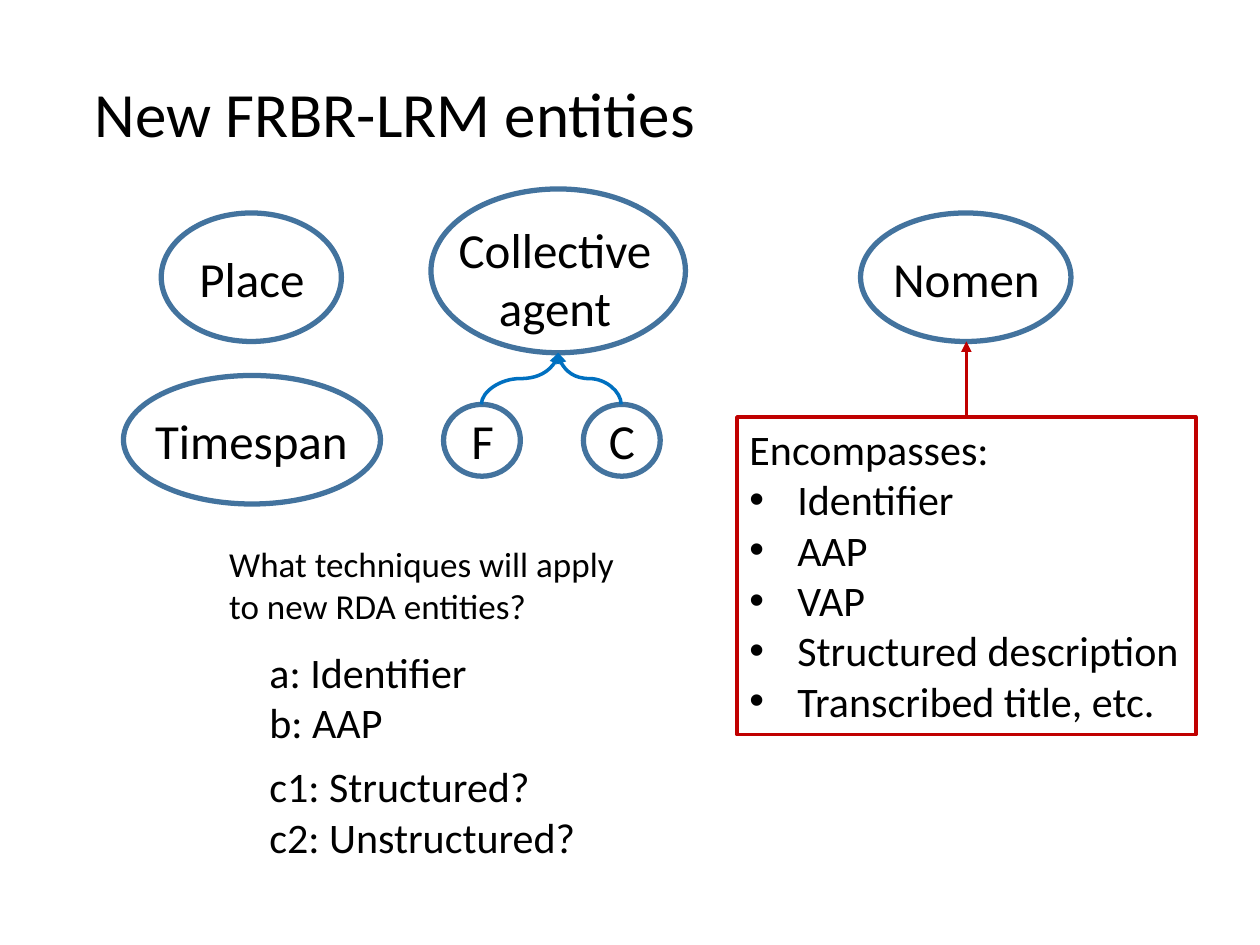
from dataclasses import dataclass

from pptx import Presentation
from pptx.dml.color import RGBColor as Rgb
from pptx.enum.shapes import MSO_CONNECTOR as Link, MSO_SHAPE as Form
from pptx.enum.text import MSO_ANCHOR as Anchor, MSO_AUTO_SIZE as Fit, PP_ALIGN as Align
from pptx.oxml import parse_xml
from pptx.oxml.ns import nsdecls
from pptx.util import Inches, Pt


@dataclass(frozen=True)
class Theme:
    """Colours, font and type sizes of the slide."""
    ink: Rgb = Rgb(0, 0, 0)
    ring: Rgb = Rgb(0x43, 0x73, 0x9E)
    blue: Rgb = Rgb(0x00, 0x70, 0xC0)
    red: Rgb = Rgb(0xC0, 0x00, 0x00)
    font: str = "Calibri"
    title: int = 36
    label: int = 28
    body: int = 24
    note: int = 20


THEME = Theme()


def place(item, box):
    """Move and size an item to left, top, width and height in inches."""
    item.left, item.top, item.width, item.height = map(Inches, box)


def add_bullet(para):
    """Give a paragraph a hanging round bullet."""
    props = para._p.get_or_add_pPr()
    props.set("marL", str(Inches(0.38)))
    props.set("indent", str(-Inches(0.38)))
    props.append(parse_xml(f'<a:buFont {nsdecls("a")} typeface="Arial"/>'))
    props.append(parse_xml(f'<a:buChar {nsdecls("a")} char="•"/>'))


def write(frame, lines, size, align=Align.LEFT, bullets=False):
    """Write lines as paragraphs, with bullets after the first if asked."""
    frame.word_wrap = False
    for pos, line in enumerate(lines):
        para = frame.add_paragraph() if pos else frame.paragraphs[0]
        if bullets and pos:
            add_bullet(para)
        para.alignment = align
        run = para.add_run()
        run.text = line
        run.font.name, run.font.size = THEME.font, Pt(size)
        run.font.color.rgb = THEME.ink


def add_text(shapes, box, lines, size, align=Align.LEFT):
    """Add a text box that grows with its lines."""
    item = shapes.add_textbox(*map(Inches, box))
    item.text_frame.auto_size = Fit.SHAPE_TO_FIT_TEXT
    write(item.text_frame, lines, size, align)


def add_frame(shapes, form, box, color, width):
    """Add an unfilled outline shape."""
    item = shapes.add_shape(form, *map(Inches, box))
    item.shadow.inherit = False
    item.fill.background()
    item.line.color.rgb, item.line.width = color, Pt(width)
    return item


def add_node(slide, oval, box, lines):
    """Add an oval grouped with its label."""
    group = slide.shapes.add_group_shape()
    add_frame(group.shapes, Form.OVAL, oval, THEME.ring, 3)
    add_text(group.shapes, box, lines, THEME.label, Align.CENTER)


def add_arrow(slide, kind, start, end, color, width):
    """Add a connector with a triangle at its end."""
    item = slide.shapes.add_connector(kind, *map(Inches, (*start, *end)))
    item.line.color.rgb, item.line.width = color, Pt(width)
    props = item._element.spPr
    props.get_or_add_ln().append(parse_xml(f'<a:tailEnd {nsdecls("a")} type="triangle"/>'))
    props.append(parse_xml(f'<a:effectLst {nsdecls("a")}/>'))
    return item


def add_curve(slide, start, end):
    """Add a curved arrow that leaves and arrives upright, by a quarter turn."""
    mid_x, mid_y = (start[0] + end[0]) / 2, (start[1] + end[1]) / 2
    sign = 1 if start[0] < end[0] else -1
    off_x, off_y = sign * (start[1] - mid_y), -sign * (start[0] - mid_x)
    item = add_arrow(slide, Link.CURVE, (mid_x + off_x, mid_y + off_y),
                     (mid_x - off_x, mid_y - off_y), THEME.blue, 2)
    turn = 90 if sign > 0 else 270
    item._element.spPr.xfrm.set("rot", str(turn * 60000))


def add_title(slide, text):
    """Place and fill the title."""
    title = slide.shapes.title
    place(title, (0.65, 0.54, 5.02, 0.71))
    title.text_frame.vertical_anchor = Anchor.TOP
    write(title.text_frame, [text], THEME.title)
    title.text_frame.auto_size = Fit.SHAPE_TO_FIT_TEXT


def add_panel(slide, box, lines):
    """Add the red framed list."""
    panel = add_frame(slide.shapes, Form.RECTANGLE, box, THEME.red, 2.25)
    panel.text_frame.vertical_anchor = Anchor.TOP
    panel.text_frame.auto_size = Fit.SHAPE_TO_FIT_TEXT
    write(panel.text_frame, lines, THEME.body, bullets=True)


def main():
    """Build and save the slide."""
    deck = Presentation()
    deck.slide_width, deck.slide_height = Inches(10), Inches(7.5)
    slide = deck.slides.add_slide(deck.slide_layouts[5])
    add_title(slide, "New FRBR-LRM entities")

    nodes = [
        ((1.28, 1.69, 1.43, 1.02), (1.48, 1.92, 1.04, 0.57), ["Place"]),
        ((0.98, 2.98, 2.04, 1.02), (1.12, 3.21, 1.75, 0.57), ["Timespan"]),
        ((6.83, 1.69, 1.67, 1.02), (6.98, 1.92, 1.38, 0.57), ["Nomen"]),
        ((3.42, 1.5, 2.02, 1.3), (3.53, 1.69, 1.75, 1.04), ["Collective", "agent"]),
        ((3.52, 3.21, 0.61, 0.57), (3.64, 3.21, 0.38, 0.57), ["F"]),
        ((4.63, 3.21, 0.61, 0.57), (4.73, 3.21, 0.41, 0.57), ["C"]),
    ]
    for oval, box, lines in nodes:
        add_node(slide, oval, box, lines)

    add_panel(slide, (5.85, 3.31, 3.64, 2.52),
              ["Encompasses:", "Identifier", "AAP", "VAP",
               "Structured description", "Transcribed title, etc."])
    for left in (3.82, 4.93):
        add_curve(slide, (left, 3.21), (4.43, 2.8))
    add_arrow(slide, Link.STRAIGHT, (7.67, 3.31), (7.67, 2.71), THEME.red, 1.5)

    notes = [
        ((1.72, 4.26, 3.29, 0.77), THEME.note,
         ["What techniques will apply", "to new RDA entities?"]),
        ((2.04, 5.08, 1.79, 0.91), THEME.body, ["a: Identifier", "b: AAP"]),
        ((2.04, 5.99, 2.65, 0.91), THEME.body, ["c1: Structured?", "c2: Unstructured?"]),
    ]
    for box, size, lines in notes:
        add_text(slide.shapes, box, lines, size)
    deck.save("out.pptx")


if __name__ == "__main__":
    main()
